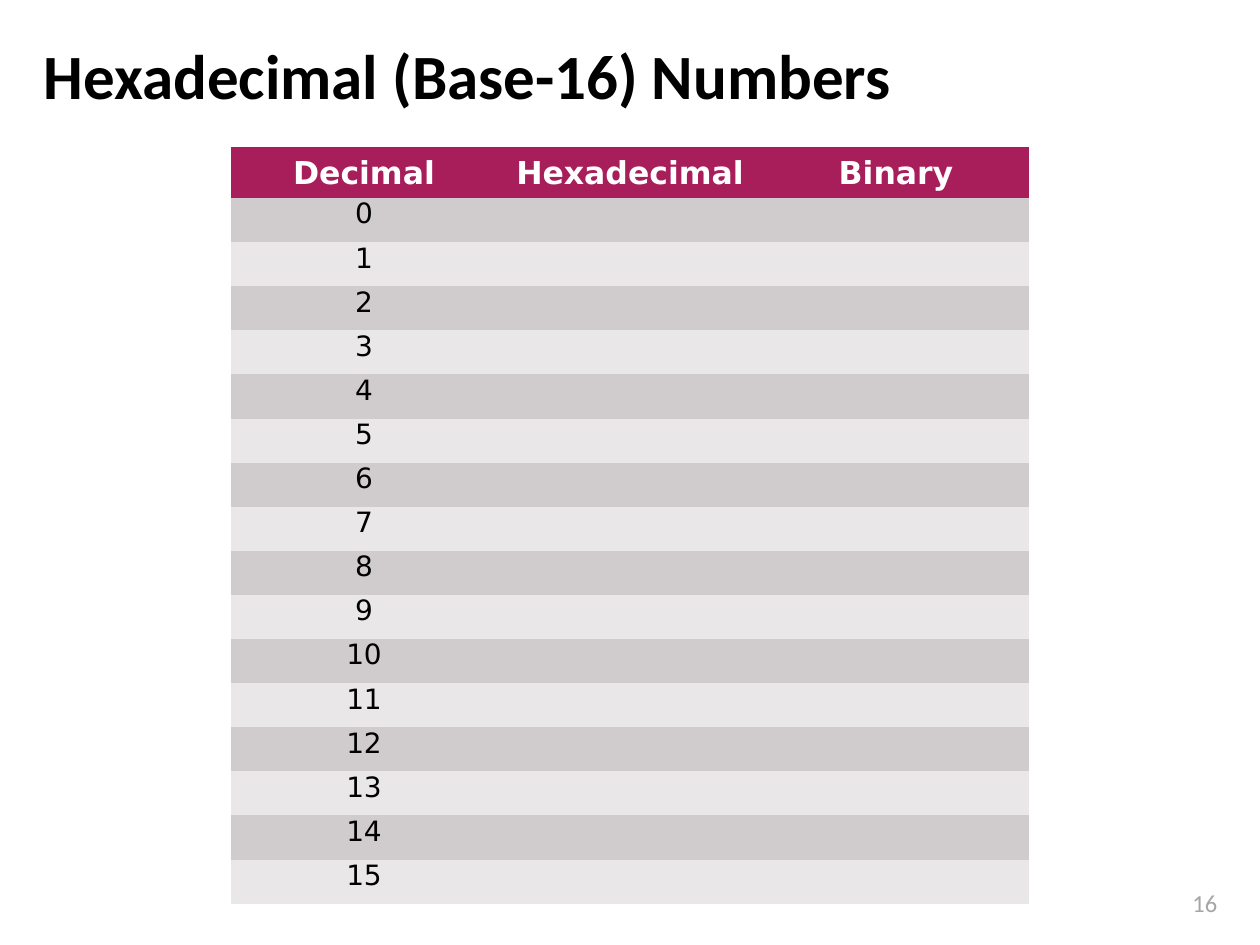
from pptx import Presentation
from pptx.dml.color import RGBColor
from pptx.enum.text import MSO_ANCHOR, PP_ALIGN
from pptx.util import Pt

HEADINGS = ["Decimal", "Hexadecimal", "Binary"]
NUMBER_COUNT = 16
COLUMN_WIDTH = 152
HEADER_HEIGHT = 29.2
ROW_HEIGHT = 25.2
NO_STYLE = "{2D5ABB26-0587-4C30-8999-92F81FD0307C}"
HEADER_FILL = "A81E5B"
BAND_FILLS = ["D0CCCD", "E9E7E8"]


def rgb(color):
    return RGBColor.from_string(color)


def write(tf, text, size, font, color, bold=False, align=PP_ALIGN.LEFT):
    """Put one formatted paragraph in a text frame."""
    tf.text = text
    p = tf.paragraphs[0]
    p.alignment = align
    for r in p.runs:
        r.font.size = Pt(size)
        r.font.name = font
        r.font.bold = bold
        r.font.color.rgb = rgb(color)


def add_text(s, box, text, size, color, anchor=MSO_ANCHOR.TOP, **style):
    tf = s.shapes.add_textbox(*map(Pt, box)).text_frame
    tf.word_wrap = True
    tf.vertical_anchor = anchor
    write(tf, text, size, "Calibri", color, **style)


def fill_cell(cell, text, fill, size, color, margin, anchor, bold=False):
    cell.fill.solid()
    cell.fill.fore_color.rgb = rgb(fill)
    cell.margin_top = cell.margin_bottom = Pt(margin)
    cell.vertical_anchor = anchor
    write(cell.text_frame, text, size, "DejaVu Sans", color, bold, PP_ALIGN.CENTER)


def add_number_table(s, left, top):
    columns = len(HEADINGS)
    height = HEADER_HEIGHT + NUMBER_COUNT * ROW_HEIGHT
    frame = s.shapes.add_table(NUMBER_COUNT + 1, columns, Pt(left), Pt(top),
                               Pt(columns * COLUMN_WIDTH), Pt(height))
    table = frame.table
    table.horz_banding = False
    # The "No Style, No Grid" table style removes the default white borders.
    table._tbl.tblPr.find("{*}tableStyleId").text = NO_STYLE
    for column in table.columns:
        column.width = Pt(COLUMN_WIDTH)
    for i, row in enumerate(table.rows):
        row.height = Pt(ROW_HEIGHT if i else HEADER_HEIGHT)

    for c, heading in enumerate(HEADINGS):
        fill_cell(table.cell(0, c), heading, HEADER_FILL, 18, "FFFFFF", 3.6,
                  MSO_ANCHOR.BOTTOM, bold=True)
    for n in range(NUMBER_COUNT):
        for c, text in enumerate([str(n), "", ""]):
            fill_cell(table.cell(n + 1, c), text, BAND_FILLS[n % 2], 16, "000000", 0,
                      MSO_ANCHOR.TOP)


def main():
    prs = Presentation()
    prs.slide_width, prs.slide_height = Pt(720), Pt(540)
    s = prs.slides.add_slide(prs.slide_layouts[6])
    add_text(s, (648, 504, 54.7, 24.5), "16", 14, "A6A6A6", align=PP_ALIGN.RIGHT)
    add_text(s, (18, 12.2, 690, 60), "Hexadecimal (Base-16) Numbers", 36, "000000",
             MSO_ANCHOR.MIDDLE, bold=True)
    add_number_table(s, 132, 84)
    prs.save("out.pptx")


if __name__ == "__main__":
    main()
